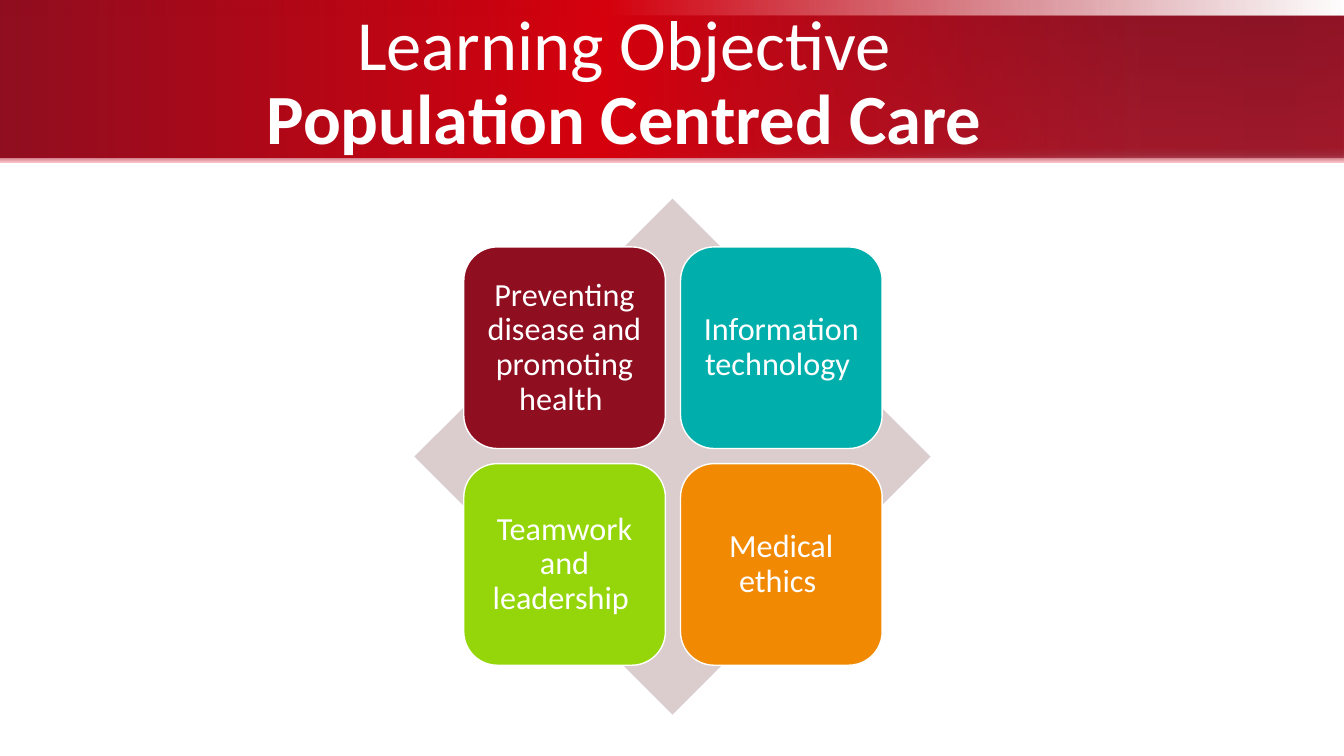
from lxml import etree
from pptx import Presentation
from pptx.dml.color import RGBColor
from pptx.enum import shapes, text
from pptx.oxml import ns
from pptx.util import Inches, Pt

WHITE = RGBColor(0xFF, 0xFF, 0xFF)
PALE = RGBColor(0xDB, 0xCC, 0xCD)
CRIMSON = RGBColor(0x8F, 0x0E, 0x20)
TEAL = RGBColor(0x00, 0xAF, 0xAB)
LIME = RGBColor(0x94, 0xD6, 0x0A)
ORANGE = RGBColor(0xF1, 0x89, 0x03)
RED = RGBColor(0xD6, 0x00, 0x0D)
DARK_RED = RGBColor(0x89, 0x0D, 0x1F)
WINE = RGBColor(0x93, 0x1E, 0x2F)
ROSE = RGBColor(0xBA, 0x2A, 0x3C)
DUSTY = RGBColor(0xB5, 0x4E, 0x5C)
PINK = RGBColor(0xF9, 0xBF, 0xC7)


def add_plain_shape(kind, left, top, width, height):
    shape = slide.shapes.add_shape(
        kind, Inches(left), Inches(top), Inches(width), Inches(height))
    shape.shadow.inherit = False
    shape.line.fill.background()
    return shape


def add_run(paragraph, words, size, bold=False):
    run = paragraph.add_run()
    run.text = words
    run.font.name = "Calibri"
    run.font.size = Pt(size)
    run.font.bold = bold
    run.font.color.rgb = WHITE


presentation = Presentation()
presentation.slide_width = Inches(13.33)
presentation.slide_height = Inches(7.5)
slide = presentation.slides.add_slide(presentation.slide_layouts[6])

bands = [
    (0, 0.17, 0, [(0, CRIMSON, 100), (45, RED, 100), (100, CRIMSON, 0)]),
    (0.16, 1.45, 90, [(0, WINE, 100), (90, ROSE, 100), (95, DUSTY, 100),
                      (100, PINK, 100)]),
    (0.16, 1.4, 0, [(0, CRIMSON, 100), (45, RED, 100), (85, CRIMSON, 60),
                    (95, DARK_RED, 60), (100, CRIMSON, 60)]),
]
for top, height, angle, stops in bands:
    band = add_plain_shape(shapes.MSO_SHAPE.RECTANGLE, 0, top, 13.33, height)
    band.fill.gradient()
    gradient = band._element.spPr.find(ns.qn("a:gradFill"))
    gradient.find(ns.qn("a:lin")).set("ang", str(angle * 60000))
    stop_list = gradient.find(ns.qn("a:gsLst"))
    stop_list.clear()
    for position, color, opacity in stops:
        stop = etree.SubElement(stop_list, ns.qn("a:gs"), pos=str(position * 1000))
        tone = etree.SubElement(stop, ns.qn("a:srgbClr"), val=str(color))
        if opacity < 100:
            etree.SubElement(tone, ns.qn("a:alpha"), val=str(opacity * 1000))

title = slide.shapes.add_textbox(
    Inches(0.67), Inches(0.16), Inches(11.04), Inches(1.37))
title.text_frame.word_wrap = True
title.text_frame.vertical_anchor = text.MSO_ANCHOR.MIDDLE
paragraph = title.text_frame.paragraphs[0]
paragraph.alignment = text.PP_ALIGN.CENTER
paragraph.line_spacing = 0.88
add_run(paragraph, "Learning Objective", 50.4)
paragraph.add_line_break()
add_run(paragraph, "Population Centred Care", 50.4, bold=True)

diamond = add_plain_shape(shapes.MSO_SHAPE.DIAMOND, 4.11, 1.97, 5.12, 5.12)
diamond.fill.solid()
diamond.fill.fore_color.rgb = PALE

topics = [
    ("Preventing disease and promoting health ", CRIMSON),
    ("Information technology ", TEAL),
    ("Teamwork and leadership ", LIME),
    ("Medical ethics ", ORANGE),
]
for index, (words, color) in enumerate(topics):
    row, column = divmod(index, 2)
    tile = add_plain_shape(shapes.MSO_SHAPE.ROUNDED_RECTANGLE,
                           4.6 + 2.15 * column, 2.45 + 2.15 * row, 2, 2)
    tile.fill.solid()
    tile.fill.fore_color.rgb = color
    tile.line.color.rgb = WHITE
    tile.line.width = Pt(1)
    frame = tile.text_frame
    frame.word_wrap = True
    frame.vertical_anchor = text.MSO_ANCHOR.MIDDLE
    frame.margin_left = frame.margin_right = Inches(0.1)
    frame.margin_top = frame.margin_bottom = Inches(0.1)
    paragraph = frame.paragraphs[0]
    paragraph.alignment = text.PP_ALIGN.CENTER
    paragraph.line_spacing = 0.9
    add_run(paragraph, words, 23)

presentation.save("out.pptx")
